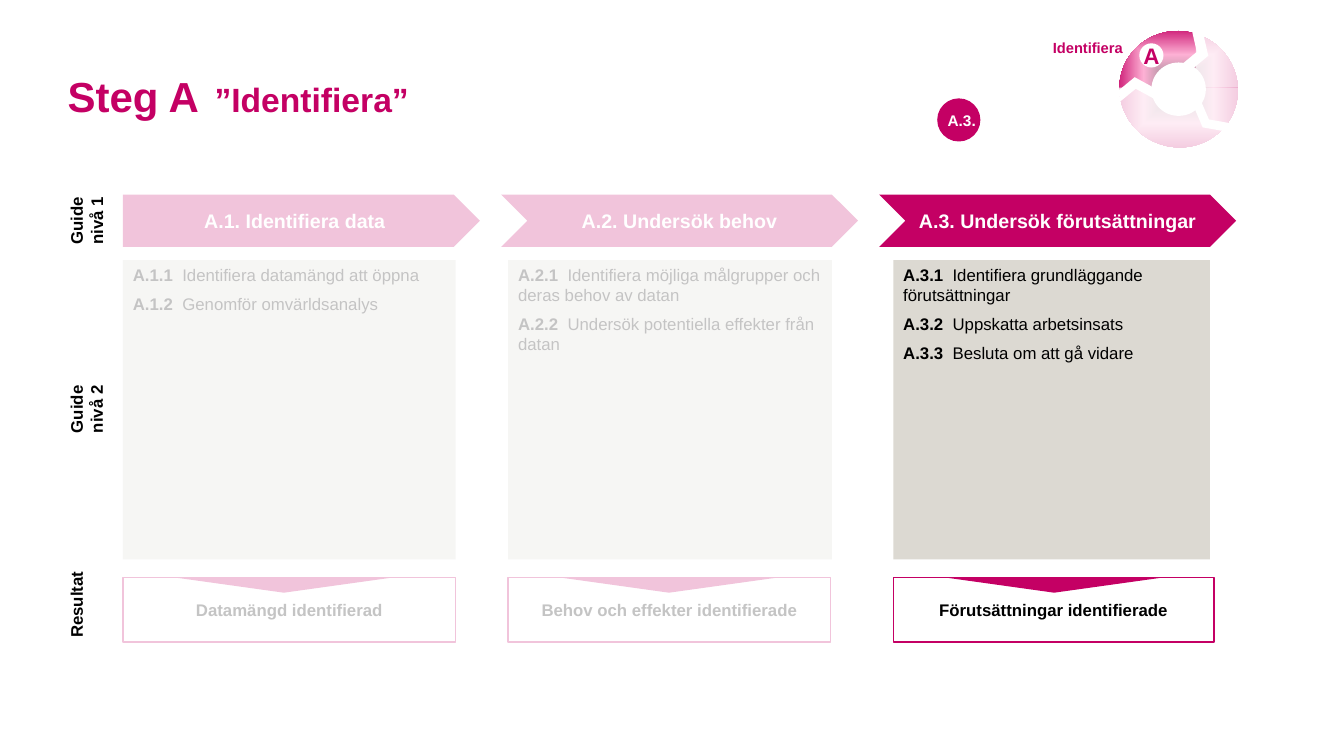
import pptx
import pptx.util
import pptx.dml.color
import pptx.enum.shapes
import pptx.enum.text
import pptx.oxml
import pptx.oxml.ns
from dataclasses import dataclass
from lxml import etree

SHAPE = pptx.enum.shapes.MSO_SHAPE
ANCHOR = pptx.enum.text.MSO_ANCHOR
ALIGN = pptx.enum.text.PP_ALIGN
EMU_PER_PX = 9144  # 100 px to the inch


@dataclass(frozen=True)
class Theme:
    font: str = "Arial"
    accent: str = "C40064"
    panel: str = "DCD9D2"
    white: str = "FFFFFF"
    ink: str = "000000"
    ring: tuple = ((1, "808080"), (45, "FDB0D4"), (85, "C50366"))
    veil_alpha: int = 77
    title: int = 30
    title_gap: int = 40
    subtitle: int = 24
    arrow: int = 14
    body: int = 12
    badge: int = 11
    wheel_label: float = 10.5
    wheel_letter: int = 16


THEME = Theme()

# number, arrow heading, steps, result, panel width, result width
COLUMNS = [
    ("A.1. Identifiera data",
     [("A.1.1", "Identifiera datamängd att öppna"),
      ("A.1.2", "Genomför omvärldsanalys")],
     "Datamängd identifierad", 330, 330),
    ("A.2. Undersök behov",
     [("A.2.1", "Identifiera möjliga målgrupper och deras behov av datan"),
      ("A.2.2", "Undersök potentiella effekter från datan")],
     "Behov och effekter identifierade", 321, 320),
    ("A.3. Undersök förutsättningar",
     [("A.3.1", "Identifiera grundläggande förutsättningar"),
      ("A.3.2", "Uppskatta arbetsinsats"),
      ("A.3.3", "Besluta om att gå vidare")],
     "Förutsättningar identifierade", 314, 318),
]


def px(length):
    return pptx.util.Emu(length * EMU_PER_PX)


def rgb(color):
    return pptx.dml.color.RGBColor.from_string(color)


def style(font, size, color, bold=None):
    font.name, font.size, font.bold = THEME.font, pptx.util.Pt(size), bold
    font.color.rgb = rgb(color)


def add_shape(slide, kind, box, fill=None, line=None, line_width=1, turn=0):
    shape = slide.shapes.add_shape(kind, *map(px, box))
    shape.shadow.inherit = False
    shape.rotation = turn
    if fill:
        shape.fill.solid()
        shape.fill.fore_color.rgb = rgb(fill)
    else:
        shape.fill.background()
    if line:
        shape.line.color.rgb = rgb(line)
        shape.line.width = pptx.util.Pt(line_width)
    else:
        shape.line.fill.background()
    return shape


def add_label(slide, box, turn=0):
    label = slide.shapes.add_textbox(*map(px, box))
    label.rotation = turn
    return label


def write(holder, lines, size, color, anchor=ANCHOR.MIDDLE, align=ALIGN.CENTER, inset=True):
    frame = holder.text_frame
    frame.word_wrap = True
    frame.vertical_anchor = anchor
    if not inset:
        frame.margin_left = frame.margin_right = frame.margin_top = frame.margin_bottom = 0
    for index, line in enumerate(lines):
        paragraph = frame.add_paragraph() if index else frame.paragraphs[0]
        paragraph.text = line
        paragraph.alignment = align
        style(paragraph.font, size, color, True)


def add_veil(slide, box, turn=0):
    veil = add_shape(slide, SHAPE.RECTANGLE, box, THEME.white, turn=turn)
    white = veil.fill._xPr.find(".//" + pptx.oxml.ns.qn("a:srgbClr"))
    etree.SubElement(white, pptx.oxml.ns.qn("a:alpha"), val=str(THEME.veil_alpha * 1000))


def fill_radial(shape, stops):
    marks = "".join(f'<a:gs pos="{at * 1000}"><a:srgbClr val="{color}"/></a:gs>'
                    for at, color in stops)
    gradient = pptx.oxml.parse_xml(
        f'<a:gradFill {pptx.oxml.ns.nsdecls("a")} rotWithShape="1"><a:gsLst>{marks}</a:gsLst>'
        '<a:path path="shape"><a:fillToRect l="50000" t="50000" r="50000" b="50000"/></a:path>'
        '</a:gradFill>')
    properties = shape._element.spPr
    properties.replace(properties.find(pptx.oxml.ns.qn("a:noFill")), gradient)


def build_title(slide, box):
    title = add_label(slide, box)
    frame = title.text_frame
    frame.word_wrap = True
    frame.margin_left = frame.margin_right = frame.margin_bottom = 0
    frame.margin_top = px(6)
    heading = frame.paragraphs[0]
    for wording, size in (("Steg A", THEME.title), (" ", THEME.title_gap),
                          ("”Identifiera”", THEME.subtitle)):
        run = heading.add_run()
        run.text = wording
        style(run.font, size, THEME.accent, True)


def build_steps(slide, box, steps):
    panel = add_shape(slide, SHAPE.RECTANGLE, box, THEME.panel)
    frame = panel.text_frame
    frame.word_wrap = True
    frame.vertical_anchor = ANCHOR.TOP
    for index, (number, task) in enumerate(steps):
        step = frame.add_paragraph() if index else frame.paragraphs[0]
        # The tab stop sets the gap between number and task
        tabs = etree.SubElement(step._p.get_or_add_pPr(), pptx.oxml.ns.qn("a:tabLst"))
        etree.SubElement(tabs, pptx.oxml.ns.qn("a:tab"), pos=str(px(49)), algn="l")
        step.alignment = ALIGN.LEFT
        if index:
            step.space_before = pptx.util.Pt(6)
        style(step.font, THEME.body, THEME.ink)
        for wording, bold in ((number + "\t", True), (task, False)):
            run = step.add_run()
            run.text = wording
            run.font.bold = bold


def build_result(slide, box, wording):
    left, top = box[:2]
    result = add_shape(slide, SHAPE.RECTANGLE, box, line=THEME.accent)
    write(result, [wording], THEME.body, THEME.ink)
    add_shape(slide, SHAPE.ISOSCELES_TRIANGLE, (left + 52, top, 215, 15), THEME.accent, turn=180)


def build_process(slide, left, top):
    for index, (heading, steps, outcome, panel_width, result_width) in enumerate(COLUMNS):
        column = left + 382 * index
        build_steps(slide, (column, top + 65, panel_width, 297), steps)
        arrow = add_shape(slide, SHAPE.CHEVRON if index else SHAPE.PENTAGON,
                          (left + 375 * index, top, 354, 52), THEME.accent)
        write(arrow, [heading], THEME.arrow, THEME.white)
        build_result(slide, (column, top + 380, result_width, 64), outcome)
    # Fade the two finished columns
    add_veil(slide, (left - 9, top - 21, 739, 479))


def build_wheel(slide, left, top):
    ring = add_shape(slide, SHAPE.OVAL, (left, top, 118, 115), turn=22.7)
    fill_radial(ring, THEME.ring)
    add_shape(slide, SHAPE.OVAL, (left + 32, top + 31, 54, 53), THEME.white)
    # Gaps between the three segments
    for x, y, width, height, turn in ((5, 40, 23, 34, 264.7), (65, 1, 24, 39, 18.7),
                                      (79, 69, 20, 37, 128.4)):
        add_shape(slide, SHAPE.CHEVRON, (left + x, top + y, width, height), THEME.white, turn=turn)
    letter = add_shape(slide, SHAPE.OVAL, (left + 20, top + 12, 24, 24), THEME.white)
    write(letter, ["A"], THEME.wheel_letter, THEME.accent, inset=False)
    phase = add_label(slide, (left - 93, top - 12, 124, 56))
    write(phase, ["Identifiera"], THEME.wheel_label, THEME.accent)
    # Fade the other segments
    add_veil(slide, (left - 18, top + 56, 154, 65))
    add_veil(slide, (left + 82, top - 1, 51, 63), turn=90)


def build_badge(slide, left, top):
    add_shape(slide, SHAPE.OVAL, (left, top, 40, 40), THEME.accent, THEME.accent, 2)
    number = add_label(slide, (left - 1, top + 6, 60, 29))
    write(number, ["A.3."], THEME.badge, THEME.white, ANCHOR.TOP, ALIGN.LEFT)


def build_row_labels(slide, center):
    for lines, middle, width in ((["Guide nivå 1"], 219, 81), (["Guide", "nivå 2"], 406, 297),
                                 (["Resultat"], 600, 101)):
        row = add_label(slide, (center - width // 2, middle - 22, width, 44), turn=270)
        write(row, lines, THEME.body, THEME.ink, ANCHOR.TOP, inset=False)


def main():
    deck = pptx.Presentation()
    deck.slide_width, deck.slide_height = px(1333), px(750)
    slide = deck.slides.add_slide(deck.slide_layouts[6])
    build_title(slide, (67, 50, 1042, 91))
    build_process(slide, 122, 193)
    build_wheel(slide, 1110, 31)
    build_badge(slide, 931, 99)
    build_row_labels(slide, 87)
    deck.save("out.pptx")


if __name__ == "__main__":
    main()
